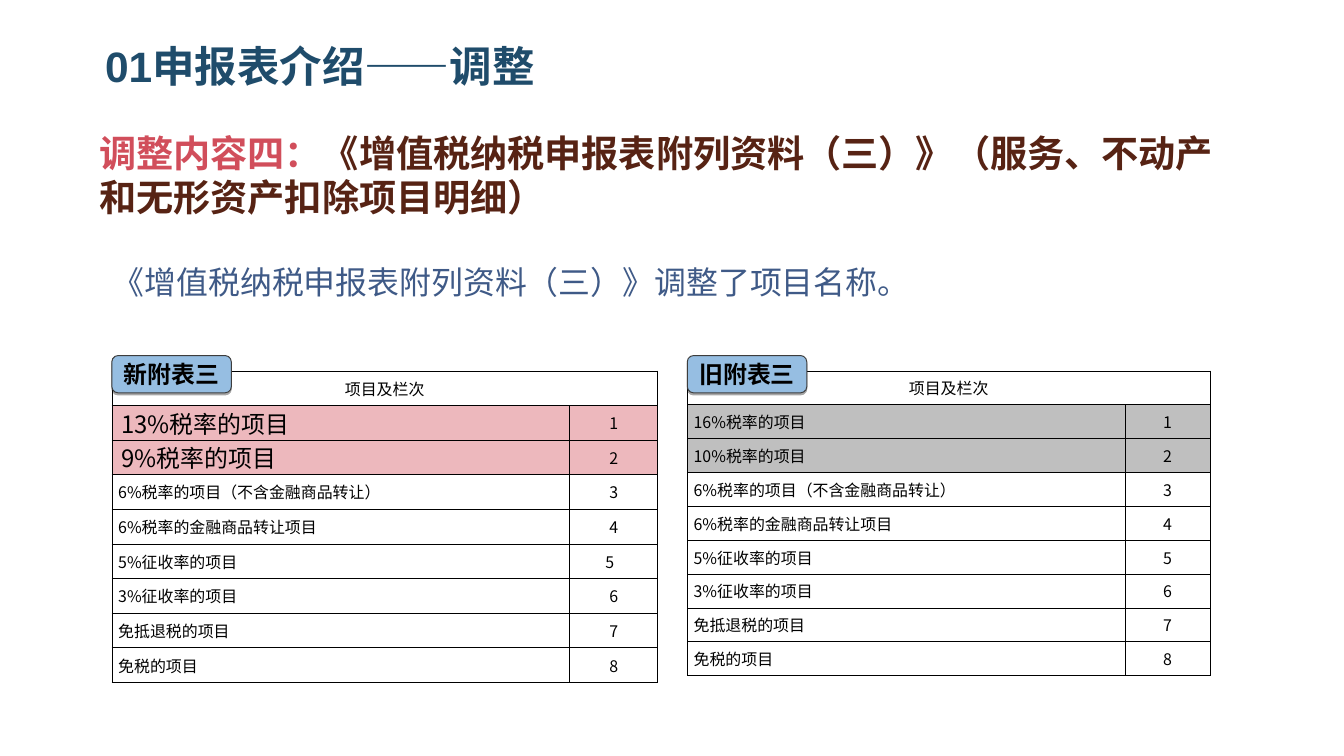
from lxml.etree import SubElement
from pptx import Presentation
from pptx.dml.color import RGBColor
from pptx.enum.shapes import MSO_SHAPE
from pptx.enum.text import MSO_ANCHOR as Anchor, PP_ALIGN as Align
from pptx.oxml import parse_xml
from pptx.oxml.ns import nsdecls, qn
from pptx.util import Inches, Pt

COLORS = {
    "title": "1F4C6B", "topic": "D14E5B", "heading": "572314", "body": "3F5A87",
    "black": "000000", "white": "FFFFFF", "pink": "EDB8BD", "gray": "BFBFBF",
    "label": "96BEE2", "label line": "3D3D3D",
}
CJK = "Noto Sans CJK SC"


def style(span, size, color, bold=False, latin=CJK):
    font = span.font
    font.size, font.bold, font.name = Pt(size), bold, latin
    font.color.rgb = RGBColor.from_string(COLORS[color])
    SubElement(span._r.get_or_add_rPr(), qn("a:ea"), typeface=CJK)


def add_text(left, top, width, height, parts, insets, anchor):
    frame = slide.shapes.add_textbox(
        Inches(left), Inches(top), Inches(width), Inches(height)).text_frame
    frame.word_wrap = True
    frame.vertical_anchor = anchor
    frame.margin_left, frame.margin_top, frame.margin_right, frame.margin_bottom = map(Inches, insets)
    for text, *look in parts:
        span = frame.paragraphs[0].add_run()
        span.text = text
        style(span, *look)
    return frame.paragraphs[0]


deck = Presentation()
deck.slide_width, deck.slide_height = Inches(14.06), Inches(7.91)
slide = deck.slides.add_slide(deck.slide_layouts[6])

# Title, heading and summary
add_text(1.1, 0.42, 7.66, 0.54, [("01申报表介绍——调整", 32, "title", True, "Arial")],
         (0, 0, 0, 0), Anchor.MIDDLE)
heading = add_text(0.94, 1.38, 12.19, 0.9, [
    ("调整内容四：", 28, "topic", True),
    ("《增值税纳税申报表附列资料（三）》（服务、不动产和无形资产扣除项目明细）",
     28, "heading", True, "Calibri"),
], (0.1, 0.05, 0.1, 0.05), Anchor.MIDDLE)
heading.line_spacing = Pt(33)
add_text(0.86, 2.7, 8.83, 0.51,
         [("《增值税纳税申报表附列资料（三）》调整了项目名称。", 24, "body")],
         (0.32, 0.05, 0.1, 0.05), Anchor.TOP)

# New and old schedules: label, left, column widths, height, changed rates, their size and fill
SCHEDULES = [
    ("新附表三", 1.17, (4.79, 0.92), 3.26, ("13%", "9%"), 18, "pink"),
    ("旧附表三", 7.19, (4.58, 0.89), 3.19, ("16%", "10%"), 12, "gray"),
]
UNCHANGED = ["6%税率的项目（不含金融商品转让）", "6%税率的金融商品转让项目", "5%征收率的项目",
             "3%征收率的项目", "免抵退税的项目", "免税的项目"]

for label, left, widths, height, rates, changed_size, changed_fill in SCHEDULES:
    items = [f"{rate}税率的项目" for rate in rates] + UNCHANGED
    rows = [("项目及栏次", "")] + [(item, str(i)) for i, item in enumerate(items, 1)]
    table = slide.shapes.add_table(len(rows), 2, Inches(left), Inches(3.88),
                                   Inches(sum(widths)), Inches(height)).table
    table.first_row = table.horz_banding = False
    for column, width in zip(table.columns, widths):
        column.width = Inches(width)
    table.cell(0, 0).merge(table.cell(0, 1))

    for r, values in enumerate(rows):
        table.rows[r].height = Inches(height / len(rows))
        changed = r in (1, 2)
        for c, value in enumerate(values):
            cell = table.cell(r, c)
            is_item = c == 0 and r > 0
            size = changed_size if changed and is_item else 12
            cell.margin_left = Inches(size / 180 if is_item else 0)
            cell.margin_top = cell.margin_right = cell.margin_bottom = 0
            cell.vertical_anchor = Anchor.MIDDLE
            cell.fill.solid()
            cell.fill.fore_color.rgb = RGBColor.from_string(
                COLORS[changed_fill if changed else "white"])
            for i, side in enumerate(("lnL", "lnR", "lnT", "lnB")):
                cell._tc.get_or_add_tcPr().insert(i, parse_xml(
                    f'<a:{side} {nsdecls("a")} w="{Pt(0.5)}"><a:solidFill>'
                    f'<a:srgbClr val="{COLORS["black"]}"/></a:solidFill></a:{side}>'))
            if value:
                para = cell.text_frame.paragraphs[0]
                para.text = value
                para.alignment = Align.LEFT if is_item else Align.CENTER
                style(para.runs[0], size, "black")
    if label == "新附表三":
        table.cell(5, 1).margin_right = Inches(0.08)

    # Label over the table corner
    box = slide.shapes.add_shape(MSO_SHAPE.ROUNDED_RECTANGLE, Inches(left), Inches(3.72),
                                 Inches(1.25), Inches(0.39))
    box.fill.solid()
    box.fill.fore_color.rgb = RGBColor.from_string(COLORS["label"])
    box.line.color.rgb = RGBColor.from_string(COLORS["label line"])
    box.line.width = Pt(0.75)
    box.shadow.inherit = False
    shadow = SubElement(box._element.spPr.find(qn("a:effectLst")), qn("a:outerShdw"),
                        dist=str(Pt(1.6)), dir="5400000", rotWithShape="0")
    shade = SubElement(shadow, qn("a:srgbClr"), val=COLORS["black"])
    SubElement(shade, qn("a:alpha"), val="34000")
    box.text_frame.text = label
    box.text_frame.vertical_anchor = Anchor.MIDDLE
    para = box.text_frame.paragraphs[0]
    para.alignment = Align.CENTER
    style(para.runs[0], 18, "black", True)

deck.save("out.pptx")
